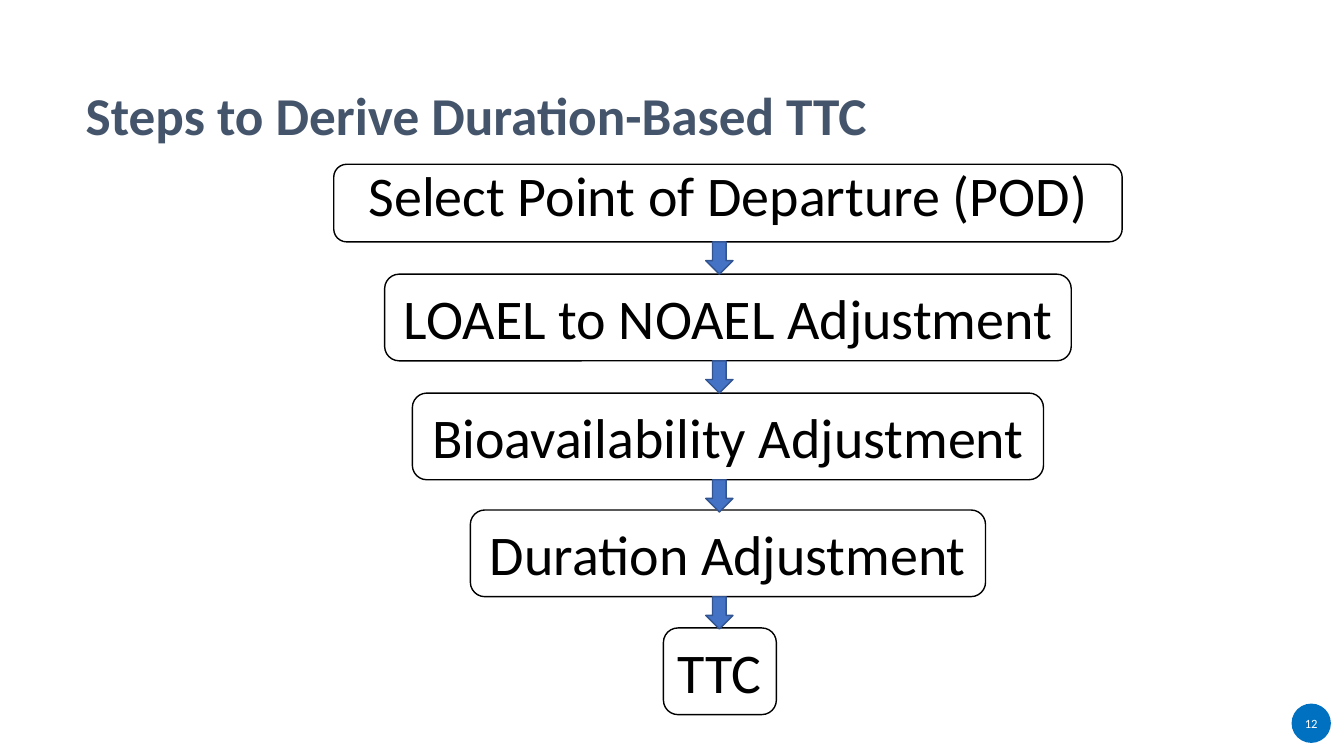
from dataclasses import dataclass

from pptx import Presentation
from pptx.dml.color import RGBColor
from pptx.enum.shapes import MSO_SHAPE
from pptx.enum.text import MSO_ANCHOR, MSO_AUTO_SIZE, PP_ALIGN
from pptx.util import Inches, Pt

ROUNDED, ARROW, OVAL = MSO_SHAPE.ROUNDED_RECTANGLE, MSO_SHAPE.DOWN_ARROW, MSO_SHAPE.OVAL
TOP, MIDDLE = MSO_ANCHOR.TOP, MSO_ANCHOR.MIDDLE
LEFT, CENTER = PP_ALIGN.LEFT, PP_ALIGN.CENTER
NO_FIT = MSO_AUTO_SIZE.NONE


@dataclass(frozen=True)
class Theme:
    font: str = "Calibri"
    title_color: str = "44546A"
    ink: str = "000000"
    paper: str = "FFFFFF"
    arrow_fill: str = "4472C4"
    arrow_line: str = "325491"
    badge: str = "0070C0"
    title_size: int = 38
    step_size: int = 40
    badge_size: int = 9


theme = Theme()


def add_block(kind, left, top, width, height, fill, line=None):
    block = page.shapes.add_shape(kind, Inches(left), Inches(top), Inches(width), Inches(height))
    block.shadow.inherit = False
    block.fill.solid()
    block.fill.fore_color.rgb = RGBColor.from_string(fill)
    if line:
        block.line.color.rgb = RGBColor.from_string(line)
        block.line.width = Pt(1)
    else:
        block.line.fill.background()
    return block


def write(shape, text, size, color, align=CENTER, bold=False, spacing=1.0, **frame_format):
    frame = shape.text_frame
    for name, value in frame_format.items():
        setattr(frame, name, value)
    para = frame.paragraphs[0]
    para.alignment = align
    para.line_spacing = spacing
    span = para.add_run()
    span.text = text
    for name, value in {"name": theme.font, "size": Pt(size), "bold": bold}.items():
        setattr(span.font, name, value)
    span.font.color.rgb = RGBColor.from_string(color)


deck = Presentation()
deck.slide_width, deck.slide_height = Inches(13.33), Inches(7.5)
page = deck.slides.add_slide(deck.slide_layouts[5])

# Title
title = page.shapes.title
title.left, title.top, title.width, title.height = map(Inches, (0.85, 0.84, 11.31, 0.71))
write(title, "Steps to Derive Duration-Based TTC", theme.title_size, theme.title_color,
      align=LEFT, bold=True, spacing=0.9, auto_size=NO_FIT, vertical_anchor=TOP,
      word_wrap=True, margin_left=0)

# Steps: text, centre, top, width, height, line spacing
steps = [
    ("Select Point of Departure (POD)", 7.22, 1.63, 7.82, 0.77, 0.8),
    ("LOAEL to NOAEL Adjustment", 7.22, 2.72, 6.81, 0.86, 1.0),
    ("Bioavailability Adjustment", 7.22, 3.9, 6.26, 0.86, 1.0),
    ("Duration Adjustment", 7.22, 5.06, 5.11, 0.86, 1.0),
    ("TTC", 7.14, 6.23, 1.12, 0.86, 1.0),
]
for text, center, top, width, height, spacing in steps:
    step = add_block(ROUNDED, center - width / 2, top, width, height, theme.paper, theme.ink)
    write(step, text, theme.step_size, theme.ink, spacing=spacing,
          vertical_anchor=TOP, word_wrap=text != "TTC")

# Arrows from each step to the next
for text, center, top, width, height, spacing in steps[:-1]:
    add_block(ARROW, 7, top + height, 0.27, 0.32, theme.arrow_fill, theme.arrow_line)

# Page number
badge = add_block(OVAL, 12.81, 6.98, 0.39, 0.39, theme.badge)
write(badge, "12", theme.badge_size, theme.paper, vertical_anchor=MIDDLE,
      margin_left=0, margin_right=0, margin_top=0, margin_bottom=0)

deck.save("out.pptx")
